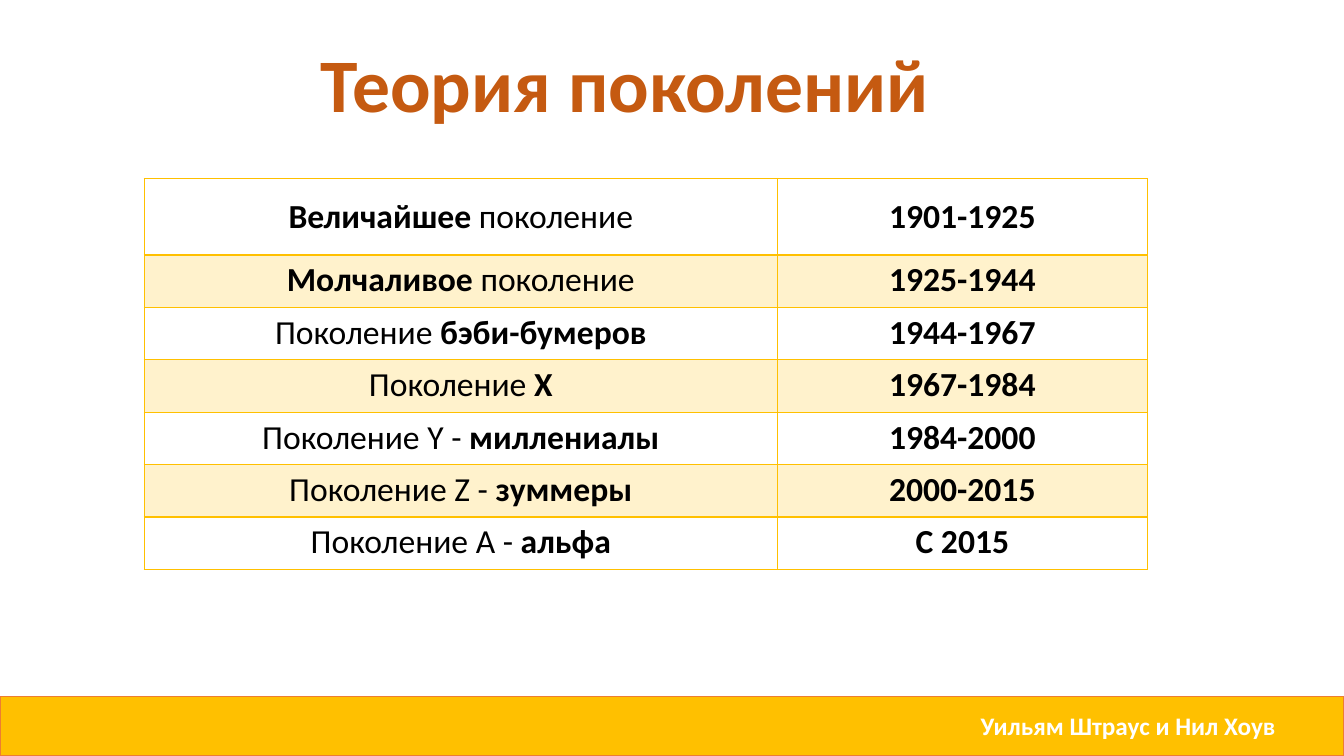
from dataclasses import dataclass

from lxml import etree
from pptx import Presentation
from pptx.dml.color import RGBColor
from pptx.enum.shapes import MSO_SHAPE
from pptx.enum.text import MSO_ANCHOR, PP_ALIGN
from pptx.oxml.ns import qn
from pptx.util import Inches, Pt

RECTANGLE = MSO_SHAPE.RECTANGLE
CENTER = PP_ALIGN.CENTER
MIDDLE, TOP = MSO_ANCHOR.MIDDLE, MSO_ANCHOR.TOP

# Each run is (text, bold)
TITLE = [("Теория поколений", True)]
AUTHORS = [("Уильям Штраус и Нил Хоув", True)]
GENERATIONS = [
    ([("Величайшее ", True), ("поколение", False)], "1901-1925"),
    ([("Молчаливое", True), (" поколение", False)], "1925-1944"),
    ([("Поколение ", False), ("бэби-бумеров", True)], "1944-1967"),
    ([("Поколение ", False), ("X", True)], "1967-1984"),
    ([("Поколение Y - ", False), ("миллениалы", True)], "1984-2000"),
    ([("Поколение Z - ", False), ("зуммеры", True)], "2000-2015"),
    ([("Поколение A - ", False), ("альфа", True)], "С 2015"),
]
COLUMN_WIDTHS = (6.28, 3.67)
FIRST_ROW_HEIGHT, ROW_HEIGHT = 0.76, 0.52
SLIDE_WIDTH, SLIDE_HEIGHT, FOOTER_HEIGHT = 13.33, 7.5, 0.59


@dataclass(frozen=True)
class Theme:
    font: str = "Calibri"
    gold: str = "FFC000"
    footer_line: str = "ED7D31"
    title: str = "C55A11"
    title_outline: str = "843C0B"
    text: str = "000000"
    footer_text: str = "FFFFFF"
    title_size: int = 54
    table_size: int = 24
    footer_size: int = 18
    band_opacity: int = 20


THEME = Theme()


def add_runs(text_frame, runs, size, color):
    paragraph = text_frame.paragraphs[0]
    paragraph.alignment = CENTER
    for text, bold in runs:
        run = paragraph.add_run()
        run.text = text
        run.font.name = THEME.font
        run.font.size = Pt(size)
        run.font.bold = bold
        run.font.color.rgb = RGBColor.from_string(color)


def make_line(tag, color, width):
    line = etree.Element(qn(tag), w=str(Pt(width)))
    fill = etree.SubElement(line, qn("a:solidFill"))
    etree.SubElement(fill, qn("a:srgbClr"), val=color)
    return line


def add_borders(cell, row):
    """Draw all four sides, with a thicker rule under the first row."""
    widths = {
        "a:lnL": 1,
        "a:lnR": 1,
        "a:lnT": 2 if row == 1 else 1,
        "a:lnB": 2 if row == 0 else 1,
    }
    properties = cell._tc.get_or_add_tcPr()
    for tag, width in widths.items():
        properties.append(make_line(tag, THEME.gold, width))


def fill_band(cell, row):
    if row % 2 == 0:
        cell.fill.background()
        return
    cell.fill.solid()
    cell.fill.fore_color.rgb = RGBColor.from_string(THEME.gold)
    color = cell._tc.tcPr.find(".//" + qn("a:solidFill") + "[last()]/..")
    color = cell._tc.tcPr.find(qn("a:solidFill") + "/" + qn("a:srgbClr"))
    etree.SubElement(color, qn("a:alpha"), val=str(THEME.band_opacity * 1000))


def add_title(slide):
    title = slide.shapes.title
    title.left, title.top = Inches(3.06), Inches(0.32)
    title.width, title.height = Inches(6.28), Inches(1.01)
    title.text_frame.word_wrap = False
    title.text_frame.vertical_anchor = TOP
    add_runs(title.text_frame, TITLE, THEME.title_size, THEME.title)
    run = title.text_frame.paragraphs[0].runs[0]
    run._r.get_or_add_rPr().insert(0, make_line("a:ln", THEME.title_outline, 1))


def add_footer(slide):
    bar = slide.shapes.add_shape(
        RECTANGLE, 0, Inches(SLIDE_HEIGHT - FOOTER_HEIGHT),
        Inches(SLIDE_WIDTH), Inches(FOOTER_HEIGHT))
    bar.shadow.inherit = False
    bar.fill.solid()
    bar.fill.fore_color.rgb = RGBColor.from_string(THEME.gold)
    bar.line.color.rgb = RGBColor.from_string(THEME.footer_line)
    bar.line.width = Pt(1)
    authors = slide.shapes.add_textbox(
        Inches(9.05), Inches(7), Inches(4.28), Inches(0.4))
    authors.text_frame.word_wrap = True
    add_runs(authors.text_frame, AUTHORS, THEME.footer_size, THEME.footer_text)


def add_generation_table(slide):
    height = FIRST_ROW_HEIGHT + ROW_HEIGHT * (len(GENERATIONS) - 1)
    table = slide.shapes.add_table(
        len(GENERATIONS), len(COLUMN_WIDTHS), Inches(1.43), Inches(1.77),
        Inches(sum(COLUMN_WIDTHS)), Inches(height)).table
    table.first_row = table.horz_banding = False
    for column, width in zip(table.columns, COLUMN_WIDTHS):
        column.width = Inches(width)
    for row, (name_runs, years) in enumerate(GENERATIONS):
        table.rows[row].height = Inches(ROW_HEIGHT if row else FIRST_ROW_HEIGHT)
        for column, runs in enumerate((name_runs, [(years, True)])):
            cell = table.cell(row, column)
            cell.vertical_anchor = TOP if row else MIDDLE
            add_runs(cell.text_frame, runs, THEME.table_size, THEME.text)
            add_borders(cell, row)
            fill_band(cell, row)


def main():
    presentation = Presentation()
    presentation.slide_width = Inches(SLIDE_WIDTH)
    presentation.slide_height = Inches(SLIDE_HEIGHT)
    title_only = presentation.slide_layouts[5]
    slide = presentation.slides.add_slide(title_only)
    add_footer(slide)
    add_title(slide)
    add_generation_table(slide)
    presentation.save("out.pptx")


if __name__ == "__main__":
    main()
